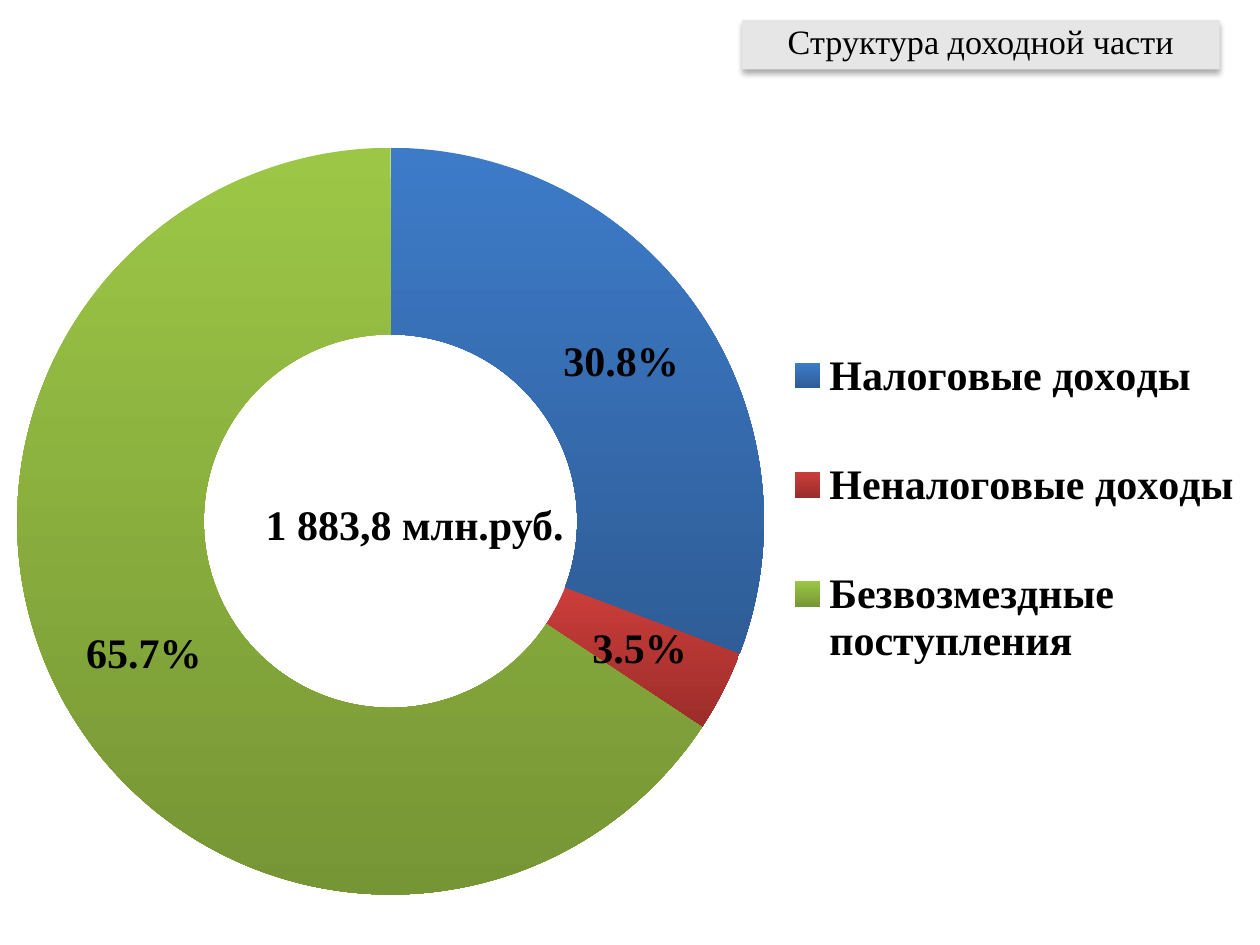
from lxml import etree
from pptx import Presentation
from pptx.chart.data import CategoryChartData
from pptx.dml.color import RGBColor
from pptx.enum.chart import XL_CHART_TYPE, XL_LEGEND_POSITION
from pptx.enum.text import MSO_ANCHOR, PP_ALIGN
from pptx.oxml import parse_xml
from pptx.oxml.ns import nsdecls, qn
from pptx.util import Inches, Pt

DOUGHNUT = XL_CHART_TYPE.DOUGHNUT
RIGHT = XL_LEGEND_POSITION.RIGHT
MIDDLE = MSO_ANCHOR.MIDDLE
CENTER = PP_ALIGN.CENTER
BLACK = RGBColor(0x00, 0x00, 0x00)
GREY = RGBColor(0xE6, 0xE6, 0xE6)
BLUES = RGBColor(0x3D, 0x7B, 0xC9), RGBColor(0x2F, 0x5D, 0x97)
REDS = RGBColor(0xCB, 0x3D, 0x3A), RGBColor(0x9B, 0x2D, 0x2A)
GREENS = RGBColor(0x9C, 0xC7, 0x46), RGBColor(0x76, 0x95, 0x35)
FONT = "Times New Roman"


def style_font(font, size, bold):
    font.name = FONT
    font.size = Pt(size)
    font.bold = bold
    font.color.rgb = BLACK


def set_layout(parent, index, target, **box):
    for old in parent.findall(qn("c:layout")):
        parent.remove(old)
    layout = etree.Element(qn("c:layout"))
    manual = etree.SubElement(layout, qn("c:manualLayout"))
    if target:
        etree.SubElement(manual, qn("c:layoutTarget"), val=target)
    for mode in ("xMode", "yMode"):
        etree.SubElement(manual, qn("c:" + mode), val="edge")
    for side, share in box.items():
        etree.SubElement(manual, qn("c:" + side), val=str(share))
    parent.insert(index, layout)


prs = Presentation()
prs.slide_width = Inches(10)
prs.slide_height = Inches(7.5)
slide = prs.slides.add_slide(prs.slide_layouts[5])

heading = slide.shapes.title
heading.left, heading.top = Inches(5.89), Inches(0.16)
heading.width, heading.height = Inches(3.79), Inches(0.39)
heading.fill.solid()
heading.fill.fore_color.rgb = GREY
heading._element.spPr.append(parse_xml(
    f'<a:effectLst {nsdecls("a")}>'
    '<a:outerShdw blurRad="44450" dist="27940" dir="5400000" rotWithShape="0">'
    '<a:srgbClr val="000000"><a:alpha val="32000"/></a:srgbClr>'
    '</a:outerShdw></a:effectLst>'))
heading.text_frame.vertical_anchor = MIDDLE
heading_line = heading.text_frame.paragraphs[0]
heading_line.alignment = CENTER
heading_line.line_spacing = 0.8
heading_run = heading_line.add_run()
heading_run.text = "Структура доходной части"
style_font(heading_run.font, 19.5, False)

total = slide.shapes.add_textbox(Inches(2.01), Inches(3.91), Inches(2.99), Inches(0.5))
total.text_frame.word_wrap = True
total_run = total.text_frame.paragraphs[0].add_run()
total_run.text = "1 883,8 млн.руб."
style_font(total_run.font, 24, True)

income = CategoryChartData()
income.categories = ["Налоговые доходы", "Неналоговые доходы", "Безвозмездные поступления"]
income.add_series("Series 1", (30.8, 3.5, 65.7))
chart = slide.shapes.add_chart(
    DOUGHNUT, Inches(0), Inches(0.84), Inches(10), Inches(6.66), income).chart
chart.has_title = False
style_font(chart.font, 24, True)

chart.has_legend = True
chart.legend.position = RIGHT
chart.legend.include_in_layout = False
set_layout(chart.legend._element, 1, None, x=0.62, y=0.22, w=0.37, h=0.52)

ring = chart.plots[0]
ring.vary_by_categories = True
ring._element.find(qn("c:holeSize")).set("val", "50")
set_layout(ring._element.getparent(), 0, "inner", x=0.01, y=0.05, w=0.6, h=0.89)

ring.has_data_labels = True
labels = ring.data_labels
labels.show_percentage = True
labels.show_value = False
labels.number_format = "0.0%"
labels.number_format_is_linked = False
style_font(labels.font, 24, True)

for index, shades in enumerate((BLUES, REDS, GREENS)):
    sector = ring.series[0].points[index].format
    sector.fill.gradient()
    sector.fill.gradient_angle = 270
    for stop, shade in zip(sector.fill.gradient_stops, shades):
        stop.color.rgb = shade
    sector.line.fill.background()

prs.save("out.pptx")
